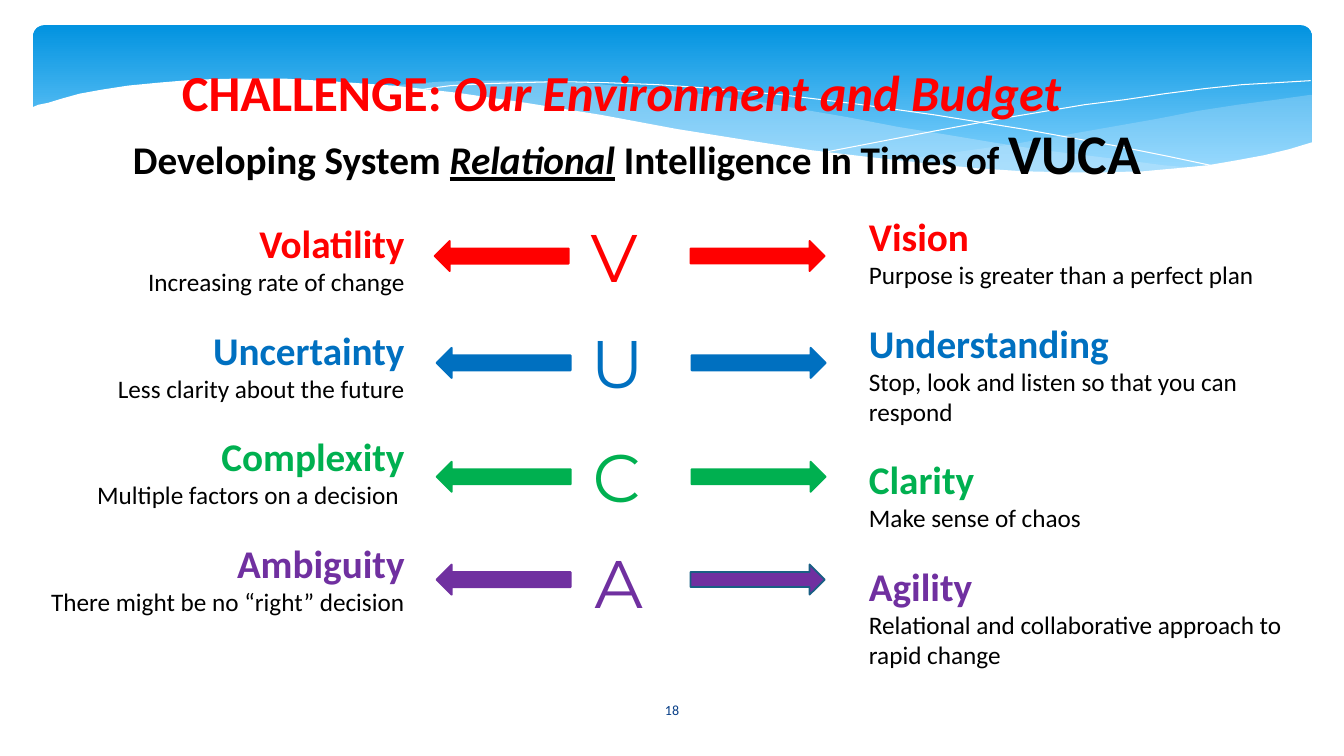
from lxml.etree import SubElement
from pptx import Presentation
from pptx.dml.color import RGBColor
from pptx.enum.shapes import MSO_SHAPE
from pptx.enum.text import MSO_ANCHOR, PP_ALIGN
from pptx.oxml.ns import qn
from pptx.util import Inches, Pt

WIDTH, HEIGHT = 13.33, 7.5
COLORS = {
    "red": "FF0000", "blue": "0070C0", "green": "00B050", "purple": "7030A0",
    "teal": "195F84", "black": "000000", "white": "FFFFFF", "navy": "073E87",
    "sky_top": "0293E0", "sky_bottom": "83D3FE", "mist": "C6E7FC",
}
RIGHT_WAVE = [
    (1300, 94), (1265, 99), (1227, 104), (1188, 110), (1147, 118), (1073, 131),
    (1005, 143), (941, 152), (882, 160), (921, 164), (958, 167), (993, 169),
    (1025, 171), (1056, 172), (1099, 172), (1138, 170), (1174, 167), (1207, 163),
    (1238, 158), (1266, 152), (1301, 142), (1301, 94),
]
MIDDLE_WAVE = [
    (1190, 167), (1154, 164), (1116, 159), (1076, 154), (1034, 149), (989, 142),
    (941, 134), (891, 126), (839, 116), (798, 109), (759, 102), (721, 97),
    (686, 92), (652, 89), (619, 86), (589, 83), (560, 82), (532, 80), (482, 80),
    (437, 81), (399, 84), (382, 86), (431, 90), (483, 97), (539, 106), (599, 116),
    (654, 126), (706, 135), (755, 143), (802, 150), (846, 156), (887, 161),
    (926, 165), (963, 168), (998, 170), (1030, 172), (1061, 173), (1104, 173),
    (1143, 171), (1167, 169),
]
FALLING_LINE = [
    (412, 90), (424, 88), (447, 85), (484, 83), (516, 82), (555, 81), (600, 82),
    (652, 84), (710, 88), (775, 94), (848, 103), (927, 114), (1014, 128),
    (1108, 145), (1158, 155), (1210, 166),
]
RISING_LINE = [
    (818, 151), (870, 141), (927, 130), (997, 117), (1075, 104), (1115, 99),
    (1155, 93), (1194, 88), (1232, 84), (1267, 82), (1300, 80),
]
WHITE_WAVE = [
    (1302, 141), (1279, 148), (1254, 154), (1227, 159), (1198, 164), (1167, 167),
    (1134, 170), (1097, 171), (1058, 171), (1015, 170), (969, 167), (918, 162),
    (863, 156), (804, 149), (740, 139), (671, 128), (596, 114), (521, 102),
    (453, 92), (390, 85), (333, 81), (282, 78), (235, 78), (194, 79), (158, 82),
    (127, 85), (101, 89), (79, 93), (61, 98), (48, 102), (38, 104), (31, 107),
    (31, 224), (1303, 224), (1303, 141),
]
ROWS = [
    ("V", "red", "red", (5.76, 2.09), (4.31, 6.85, 2.39)),
    ("U", "blue", "blue", (5.76, 3.14), (4.33, 6.86, 3.45)),
    ("C", "green", "green", (5.78, 4.27), (4.33, 6.86, 4.58)),
    ("A", "purple", "teal", (5.8, 5.32), (4.33, 6.85, 5.6)),
]
PROBLEMS = [
    ("Volatility", "Increasing rate of change"),
    ("Uncertainty", "Less clarity about the future"),
    ("Complexity", "Multiple factors on a decision "),
    ("Ambiguity", "There might be no “right” decision"),
]
ANSWERS = [
    ("Vision", "Purpose is greater than a perfect plan"),
    ("Understanding", "Stop, look and listen so that you can respond"),
    ("Clarity", "Make sense of chaos"),
    ("Agility", "Relational and collaborative approach to rapid change"),
]


def color(name):
    """Return the named palette color."""
    return RGBColor.from_string(COLORS[name])


def add_text_box(slide, box, wrap=True):
    """Add an empty text box and return its text frame."""
    text_frame = slide.shapes.add_textbox(*map(Inches, box)).text_frame
    text_frame.word_wrap = wrap
    return text_frame


def add_run(paragraph, text, size, color_name, bold=False, italic=False,
            underline=False, font_name="Calibri"):
    """Append one formatted run."""
    run = paragraph.add_run()
    run.text = text
    font = run.font
    font.name, font.size = font_name, Pt(size)
    font.bold, font.italic, font.underline = bold, italic, underline
    font.color.rgb = color(color_name)


def add_curve(slide, box, points, fill=None, opacity=100):
    """Draw a filled wave, or a white hairline when there is no fill."""
    left, top, width, _ = box
    builder = slide.shapes.build_freeform(
        *points[0], scale=Inches(width) / (WIDTH * 100))
    builder.add_line_segments(points[1:], close=fill is not None)
    curve = builder.convert_to_shape(Inches(left), Inches(top))
    curve.shadow.inherit = False
    if fill is None:
        curve.fill.background()
        curve.line.color.rgb = color("white")
        curve.line.width = Pt(0)
        return
    curve.line.fill.background()
    curve.fill.solid()
    curve.fill.fore_color.rgb = color(fill)
    if opacity < 100:
        fill_color = curve.fill._xPr.find(qn("a:solidFill"))[0]
        SubElement(fill_color, qn("a:alpha")).set("val", str(opacity * 1000))


def add_banner(slide, box):
    """Draw the blue gradient banner with its waves."""
    left, top, width, height = box
    sky = slide.shapes.add_shape(
        MSO_SHAPE.ROUNDED_RECTANGLE, Inches(left + 0.33), Inches(top + 0.25),
        Inches(width - 0.65), Inches(height - 0.69))
    sky.adjustments[0] = 0.07
    sky.shadow.inherit = False
    sky.line.fill.background()
    sky.fill.gradient()
    sky.fill.gradient_angle = 270
    stops = zip(sky.fill.gradient_stops, ("sky_top", "sky_bottom"), (0, 0.9))
    for stop, name, position in stops:
        stop.color.rgb = color(name)
        stop.position = position
    add_curve(slide, box, RIGHT_WAVE, "mist", 29)
    add_curve(slide, box, MIDDLE_WAVE, "mist", 40)
    add_curve(slide, box, FALLING_LINE)
    add_curve(slide, box, RISING_LINE)
    add_curve(slide, box, WHITE_WAVE, "white")


def add_headings(slide, box):
    """Write the title and the subtitle below it."""
    left, top, width, _ = box
    title = add_text_box(slide, (left + 0.44, top, 9.01, 0.71), wrap=False)
    paragraph = title.paragraphs[0]
    paragraph.alignment = PP_ALIGN.CENTER
    add_run(paragraph, "CHALLENGE: ", 36, "red", bold=True)
    add_run(paragraph, "Our Environment and Budget", 36, "red", bold=True, italic=True)
    subtitle = add_text_box(slide, (left, top + 0.57, width, 0.77))
    paragraph = subtitle.paragraphs[0]
    add_run(paragraph, "Developing System ", 28, "black", bold=True)
    add_run(paragraph, "Relational", 28, "black", bold=True, italic=True, underline=True)
    add_run(paragraph, " Intelligence In Times of ", 28, "black", bold=True)
    add_run(paragraph, "VUCA", 40, "black", bold=True)


def add_terms(slide, box, terms, alignment):
    """Write a column of colored terms, each with its explanation."""
    text_frame = add_text_box(slide, box)
    for index, ((term, explanation), row) in enumerate(zip(terms, ROWS)):
        heading = text_frame.add_paragraph() if index else text_frame.paragraphs[0]
        heading.space_before = Pt(20.8 if index else 0)
        add_run(heading, term, 28, row[1], bold=True)
        detail = text_frame.add_paragraph()
        add_run(detail, explanation, 18, "black")
        heading.alignment = detail.alignment = alignment


def add_letter_row(slide, letter, fill, outline, letter_corner, arrow_edges):
    """Draw one letter with an arrow pointing away on each side."""
    text_frame = add_text_box(slide, (*letter_corner, 0.76, 0.91), wrap=False)
    add_run(text_frame.paragraphs[0], letter, 48, fill, font_name="Montserrat")
    left_arrow, right_arrow, top = arrow_edges
    for left, rotation, line in ((left_arrow, 180, fill), (right_arrow, 0, outline)):
        arrow = slide.shapes.add_shape(
            MSO_SHAPE.RIGHT_ARROW, *map(Inches, (left, top, 1.33, 0.3)))
        arrow.rotation = rotation
        arrow.shadow.inherit = False
        arrow.fill.solid()
        arrow.fill.fore_color.rgb = color(fill)
        arrow.line.color.rgb = color(line)
        arrow.line.width = Pt(1.25)


def add_slide_number(slide, box):
    """Write the slide number."""
    text_frame = add_text_box(slide, box)
    text_frame.vertical_anchor = MSO_ANCHOR.MIDDLE
    text_frame.paragraphs[0].alignment = PP_ALIGN.CENTER
    add_run(text_frame.paragraphs[0], "18", 10, "navy")


def main():
    """Build and save the slide."""
    presentation = Presentation()
    presentation.slide_width = Inches(WIDTH)
    presentation.slide_height = Inches(HEIGHT)
    slide = presentation.slides.add_slide(presentation.slide_layouts[6])
    add_banner(slide, (0, 0, WIDTH, 2.25))
    add_slide_number(slide, (5.82, 6.84, 1.69, 0.4))
    add_headings(slide, (1.22, 0.56, 12.27, 1.34))
    add_terms(slide, (-0.01, 2.13, 4.12, 4.11), PROBLEMS, PP_ALIGN.RIGHT)
    add_terms(slide, (8.52, 2.06, 4.6, 4.71), ANSWERS, PP_ALIGN.LEFT)
    for row in ROWS:
        add_letter_row(slide, *row)
    presentation.save("out.pptx")


if __name__ == "__main__":
    main()
